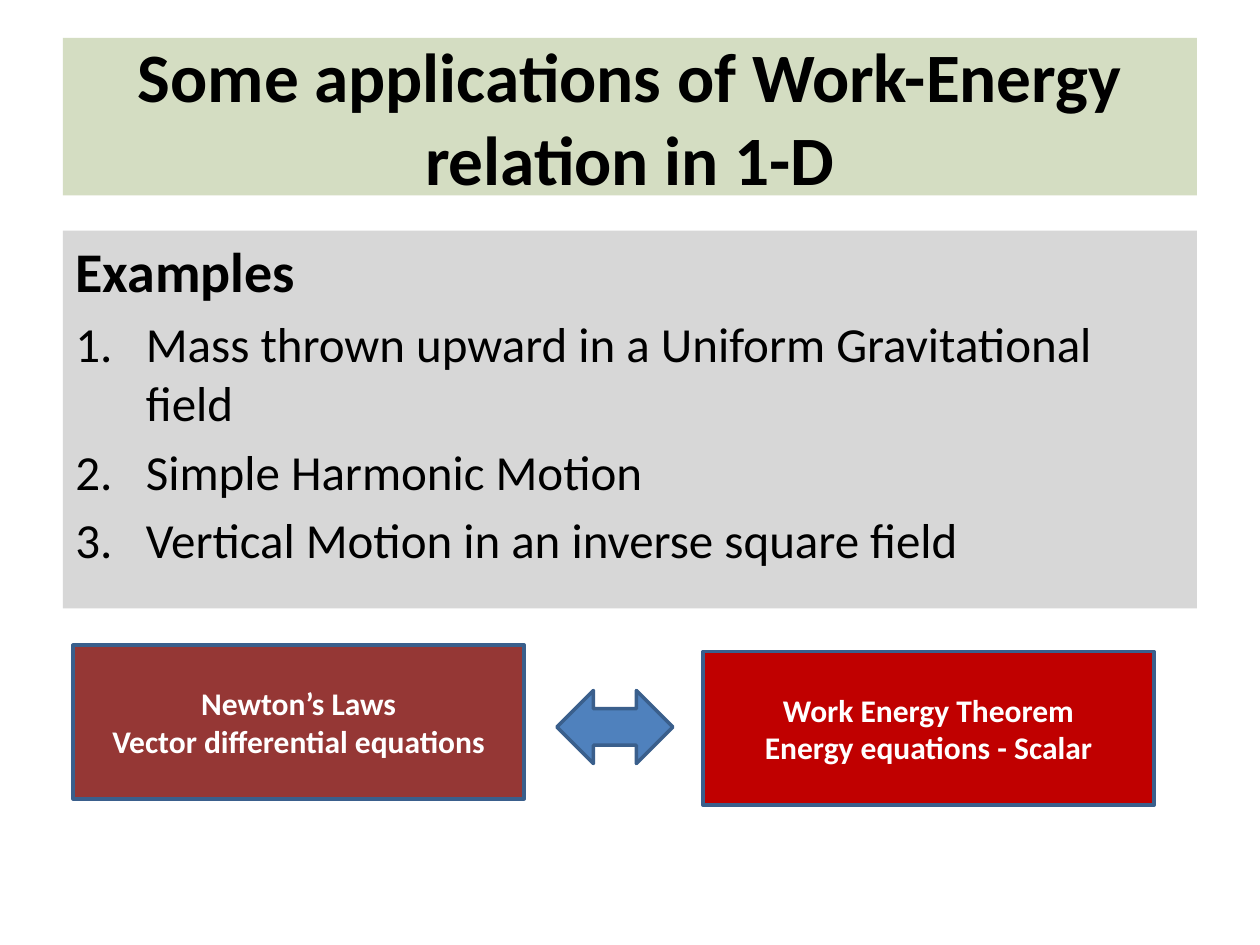
"""Build the slide on applications of the work-energy relation."""
from pptx import Presentation
from pptx import util as u
from pptx.dml.color import RGBColor
from pptx.enum import shapes, text
from pptx.oxml.ns import qn
from lxml import etree

THEME = {
    "font": "Calibri", "dark": "000000", "light": "FFFFFF", "edge": "3A5F8C",
    "green": "77933C", "gray": "A6A6A6", "brick": "953735", "red": "C00000",
    "blue": "4F81BD", "title": 39.6, "head": 32, "item": 28, "label": 18,
}
TITLE = "Some applications of Work-Energy relation in 1-D"
HEAD = "Examples"
ITEMS = [
    "Mass thrown upward in a Uniform Gravitational field",
    "Simple Harmonic Motion",
    "Vertical Motion in an inverse square field",
]
CARDS = [
    (0.58, 5.12, "brick", ["Newton’s Laws", "Vector differential equations"]),
    (5.58, 5.17, "red", ["Work Energy Theorem", "Energy equations - Scalar"]),
]
CARD = (3.58, 1.22)
ARROW = (4.42, 5.48, 0.92, 0.58)
LEFT, WIDE = 0.5, 9
INDENT = 0.56


def add_form(slide, kind, box, fill, alpha=None):
    form = slide.shapes.add_shape(kind, *map(u.Inches, box))
    form.shadow.inherit = False
    form.fill.solid()
    form.fill.fore_color.rgb = RGBColor.from_string(THEME[fill])
    if alpha is None:
        form.line.color.rgb = RGBColor.from_string(THEME["edge"])
        form.line.width = u.Pt(2)
    else:
        form.line.fill.background()
        color = form.fill._xPr.find(".//" + qn("a:srgbClr"))
        etree.SubElement(color, qn("a:alpha"), val=str(alpha * 1000))
    return form


def write(form, lines, size, color, bold=True, align=text.PP_ALIGN.CENTER,
          anchor=text.MSO_ANCHOR.MIDDLE):
    frame = form.text_frame
    frame.word_wrap = True
    frame.vertical_anchor = anchor
    frame.text = "\n".join(lines)
    for para in frame.paragraphs:
        para.alignment = align
        for run in para.runs:
            run.font.name = THEME["font"]
            run.font.size = u.Pt(THEME[size])
            run.font.bold = bold
            run.font.color.rgb = RGBColor.from_string(THEME[color])
    return frame.paragraphs


def number(para):
    para.space_before = u.Pt(0.2 * THEME["item"])
    props = para._p.get_or_add_pPr()
    props.set("marL", str(u.Inches(INDENT)))
    props.set("indent", str(-u.Inches(INDENT)))
    etree.SubElement(props, qn("a:buFont"), typeface="+mj-lt")
    etree.SubElement(props, qn("a:buAutoNum"), type="arabicPeriod")


def main():
    deck = Presentation()
    deck.slide_width, deck.slide_height = u.Inches(10), u.Inches(7.5)
    slide = deck.slides.add_slide(deck.slide_layouts[6])
    rect = shapes.MSO_SHAPE.RECTANGLE

    title = add_form(slide, rect, (LEFT, 0.3, WIDE, 1.25), "green", 31)
    write(title, [TITLE], "title", "dark")

    body = add_form(slide, rect, (LEFT, 1.83, WIDE, 3), "gray", 44)
    head, *rest = write(body, [HEAD] + ITEMS, "item", "dark", False,
                        text.PP_ALIGN.LEFT, text.MSO_ANCHOR.TOP)
    head.runs[0].font.size = u.Pt(THEME["head"])
    head.runs[0].font.bold = True
    for para in rest:
        number(para)

    for left, top, fill, lines in CARDS:
        card = add_form(slide, rect, (left, top, *CARD), fill)
        write(card, lines, "label", "light")
    add_form(slide, shapes.MSO_SHAPE.LEFT_RIGHT_ARROW, ARROW, "blue")

    deck.save("out.pptx")


if __name__ == "__main__":
    main()
